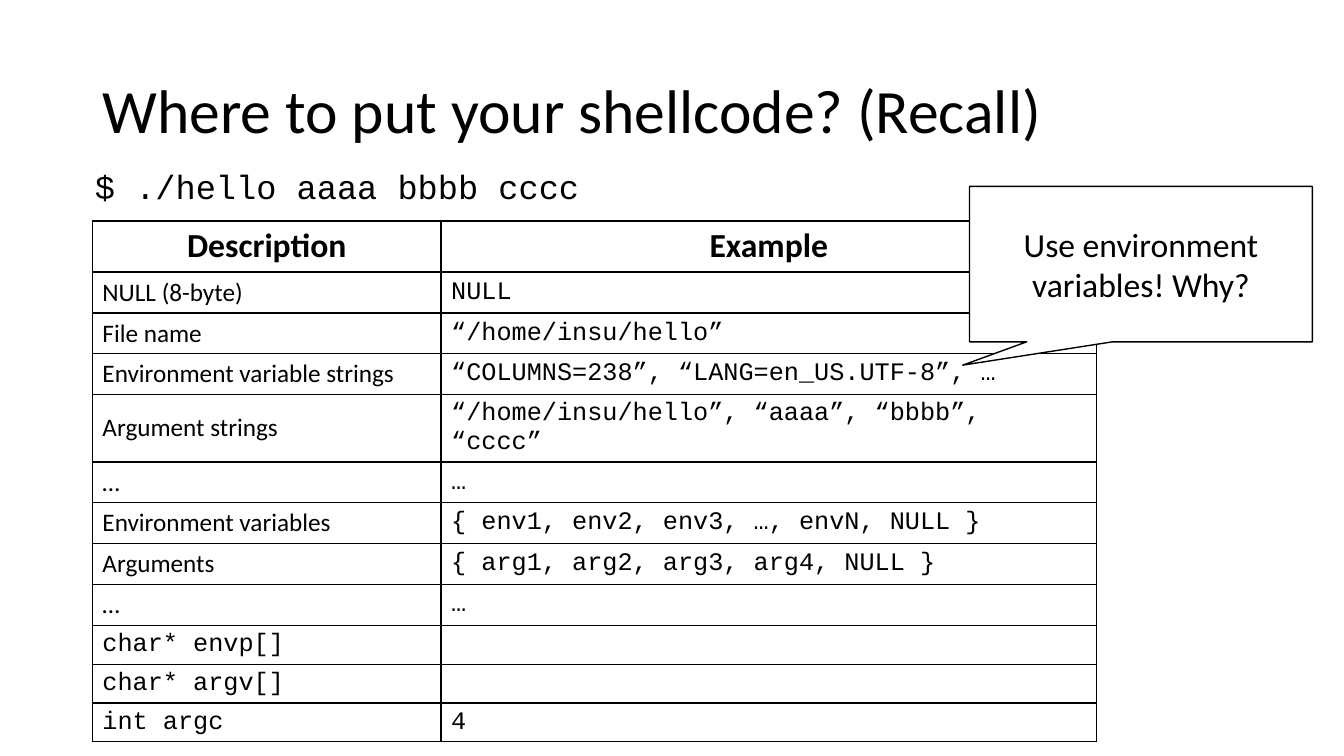
from dataclasses import dataclass
from typing import NamedTuple

from lxml.etree import SubElement
from pptx import Presentation
from pptx.dml.color import RGBColor
from pptx.enum.shapes import MSO_SHAPE
from pptx.enum.text import MSO_ANCHOR, MSO_AUTO_SIZE, PP_ALIGN
from pptx.oxml.ns import qn
from pptx.util import Inches, Pt

SANS, MONO = "Calibri", "Courier New"
BLACK, WHITE = "000000", "FFFFFF"
GRID_UNIT = 1 / 12  # inches; the slide is 160 columns by 90 rows


class Area(NamedTuple):
    column: float
    row: float
    columns: float
    rows: float


@dataclass(frozen=True)
class MemoryRow:
    description: str
    example: str
    description_font: str = SANS
    height: float = 4.86


TITLE_AREA = Area(11, 4.8, 138, 17.4)
COMMAND_AREA = Area(10.1, 19.7, 138, 57.1)
TABLE_AREA = Area(11, 26.3, 119.5, 58.82)
CALLOUT_AREA = Area(115.4, 22.2, 40.8, 18.5)
COLUMN_WIDTHS = (41.5, 78)
HEADINGS = ("Description", "Example")
HEADING_HEIGHT = 6.08
MONO_HEIGHT = 4.62

MEMORY_ROWS = [
    MemoryRow("NULL (8-byte)", "NULL"),
    MemoryRow("File name", "“/home/insu/hello”"),
    MemoryRow("Environment variable strings", "“COLUMNS=238”, “LANG=en_US.UTF-8”, …"),
    MemoryRow("Argument strings", "“/home/insu/hello”, “aaaa”, “bbbb”, “cccc”"),
    MemoryRow("…", "…"),
    MemoryRow("Environment variables", "{ env1, env2, env3, …, envN, NULL }"),
    MemoryRow("Arguments", "{ arg1, arg2, arg3, arg4, NULL }"),
    MemoryRow("…", "…"),
    MemoryRow("char* envp[]", "", MONO, MONO_HEIGHT),
    MemoryRow("char* argv[]", "", MONO, MONO_HEIGHT),
    MemoryRow("int argc", "4", MONO, MONO_HEIGHT),
]


def grid(units: float) -> int:
    return Inches(units * GRID_UNIT)


def color(value: str) -> RGBColor:
    return RGBColor.from_string(value)


def place(shape, area: Area) -> None:
    shape.left, shape.top, shape.width, shape.height = map(grid, area)


def write(paragraph, text: str, font_name: str, size: float,
          bold: bool = False, align=PP_ALIGN.LEFT) -> None:
    paragraph.alignment = align
    if not text:
        # An empty cell keeps the line height of its font
        end = SubElement(paragraph._p, qn("a:endParaRPr"), sz=str(size * 100))
        SubElement(end, qn("a:latin"), typeface=font_name)
        return
    run = paragraph.add_run()
    run.text = text
    run.font.name = font_name
    run.font.size = Pt(size)
    run.font.bold = bold
    run.font.color.rgb = color(BLACK)


def draw_placeholder(shape, area: Area, text: str, font_name: str,
                     size: float, anchor) -> None:
    place(shape, area)
    frame = shape.text_frame
    frame.word_wrap = True
    frame.auto_size = MSO_AUTO_SIZE.NONE
    frame.vertical_anchor = anchor
    paragraph = frame.paragraphs[0]
    paragraph.line_spacing = 0.9
    write(paragraph, text, font_name, size)


def remove_bullet(paragraph) -> None:
    properties = paragraph._p.get_or_add_pPr()
    properties.set("marL", "0")
    properties.set("indent", "0")
    SubElement(properties, qn("a:buNone"))


def format_cell(cell) -> None:
    cell.vertical_anchor = MSO_ANCHOR.MIDDLE
    properties = cell._tc.get_or_add_tcPr()
    for side in ("lnL", "lnR", "lnT", "lnB"):
        border = SubElement(properties, qn(f"a:{side}"), w=str(Pt(1)))
        fill = SubElement(border, qn("a:solidFill"))
        SubElement(fill, qn("a:srgbClr"), val=BLACK)
    cell.fill.background()


def draw_memory_table(slide) -> None:
    table = slide.shapes.add_table(
        len(MEMORY_ROWS) + 1, len(HEADINGS), *map(grid, TABLE_AREA)).table
    table.first_row = False
    table.horz_banding = False
    for column, width in zip(table.columns, COLUMN_WIDTHS):
        column.width = grid(width)
    heights = [HEADING_HEIGHT] + [entry.height for entry in MEMORY_ROWS]
    for row, height in zip(table.rows, heights):
        row.height = grid(height)
    for cell in table.iter_cells():
        format_cell(cell)

    for index, heading in enumerate(HEADINGS):
        paragraph = table.cell(0, index).text_frame.paragraphs[0]
        write(paragraph, heading, SANS, 24, True, PP_ALIGN.CENTER)
    for index, entry in enumerate(MEMORY_ROWS, start=1):
        texts = ((entry.description, entry.description_font), (entry.example, MONO))
        for column, (text, font_name) in enumerate(texts):
            paragraph = table.cell(index, column).text_frame.paragraphs[0]
            write(paragraph, text, font_name, 18)


def draw_callout(slide) -> None:
    callout = slide.shapes.add_shape(
        MSO_SHAPE.RECTANGULAR_CALLOUT, *map(grid, CALLOUT_AREA))
    callout.adjustments[0] = -0.52
    callout.adjustments[1] = 0.65
    callout.shadow.inherit = False
    callout.fill.solid()
    callout.fill.fore_color.rgb = color(WHITE)
    callout.line.color.rgb = color(BLACK)
    callout.line.width = Pt(1)
    frame = callout.text_frame
    frame.word_wrap = True
    frame.vertical_anchor = MSO_ANCHOR.MIDDLE
    write(frame.paragraphs[0], "Use environment variables! Why?", SANS, 24,
          align=PP_ALIGN.CENTER)


def main() -> None:
    presentation = Presentation()
    presentation.slide_width = Inches(13.33)
    presentation.slide_height = Inches(7.5)
    slide = presentation.slides.add_slide(presentation.slide_layouts[1])

    # Title and command line
    draw_placeholder(slide.shapes.title, TITLE_AREA,
                     "Where to put your shellcode? (Recall)", SANS, 44, MSO_ANCHOR.MIDDLE)
    command = slide.placeholders[1]
    draw_placeholder(command, COMMAND_AREA,
                     "$ ./hello aaaa bbbb cccc", MONO, 24, MSO_ANCHOR.TOP)
    command_line = command.text_frame.paragraphs[0]
    command_line.space_before = Pt(10)
    remove_bullet(command_line)

    # Stack layout and the question about it
    draw_memory_table(slide)
    draw_callout(slide)

    presentation.save("out.pptx")


if __name__ == "__main__":
    main()
